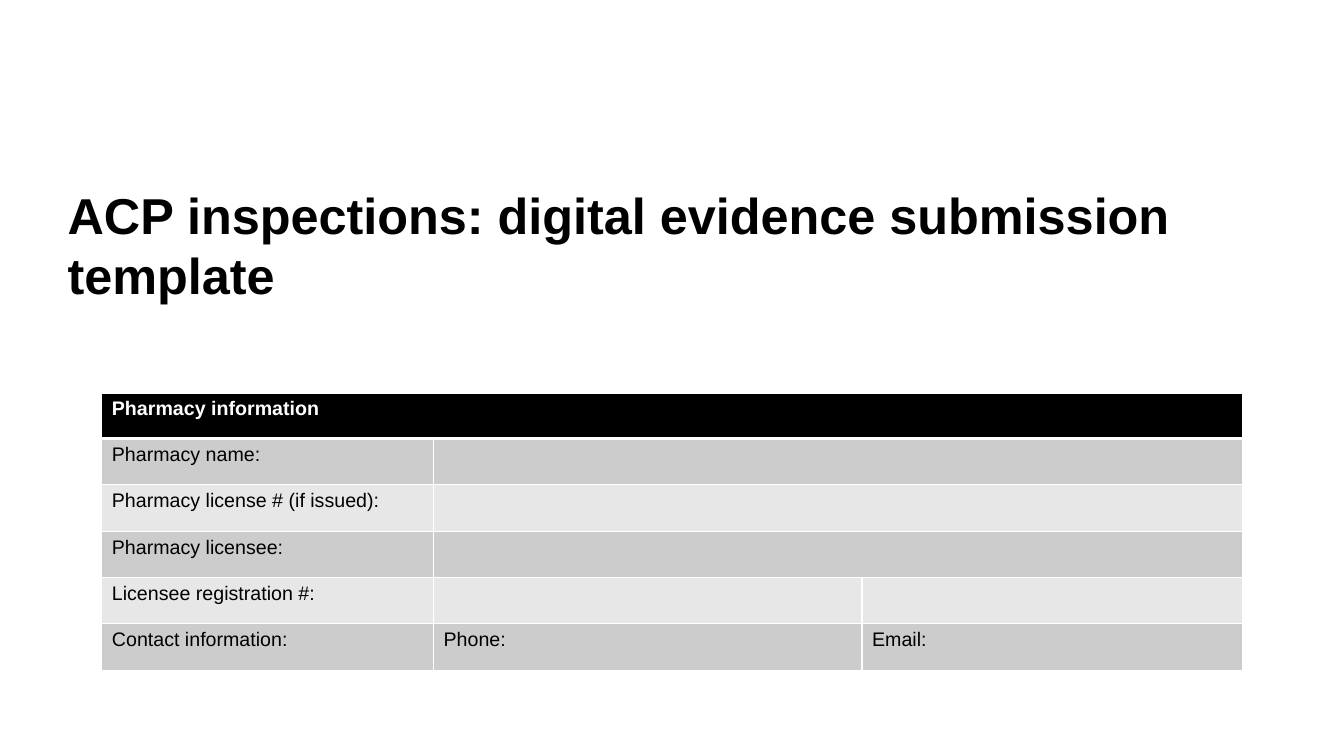
from lxml import etree
from pptx import Presentation
from pptx import util as u
from pptx.dml.color import RGBColor
from pptx.enum import text
from pptx.oxml.ns import qn

WIDTH, HEIGHT = 13.33, 7.5
BLACK, WHITE = "000000", "FFFFFF"
BANDS = ("CCCCCC", "E7E7E7")


def color(hex_code):
    return RGBColor.from_string(hex_code)


def write(frame, words, size=14, bold=False, ink=BLACK, font="Arial"):
    paragraph = frame.paragraphs[0]
    paragraph.text = words
    paragraph.alignment = text.PP_ALIGN.LEFT
    style = paragraph.font
    style.name, style.size, style.bold = font, u.Pt(size), bold
    style.color.rgb = color(ink)


class FormSlide:
    """Holds the slide; places are shares of its width and height."""

    def __init__(self, deck):
        self.deck = deck
        self.slide = deck.slides.add_slide(deck.slide_layouts[5])

    def box(self, left, top, width, height):
        across, down = self.deck.slide_width, self.deck.slide_height
        return [u.Emu(round(share * side)) for share, side in
                zip((left, top, width, height), (across, down, across, down))]

    def title(self, words, place):
        heading = self.slide.shapes.title
        heading.left, heading.top, heading.width, heading.height = self.box(*place)
        frame = heading.text_frame
        frame.word_wrap = True
        frame.auto_size = text.MSO_AUTO_SIZE.NONE
        frame.vertical_anchor = text.MSO_ANCHOR.MIDDLE
        write(frame, words, size=36, bold=True)

    def cell(self, cell, words, fill, bottom=1, **style):
        cell.fill.solid()
        cell.fill.fore_color.rgb = color(fill)
        write(cell.text_frame, words, **style)
        # White rules on all four sides
        properties = cell._tc.get_or_add_tcPr()
        for index, (side, points) in enumerate(zip("LRTB", (1, 1, 1, bottom))):
            rule = etree.Element(qn(f"a:ln{side}"), w=str(u.Pt(points)))
            paint = etree.SubElement(rule, qn("a:solidFill"))
            etree.SubElement(paint, qn("a:srgbClr"), val=WHITE)
            properties.insert(index, rule)

    def form(self, header, entries, place, widths, header_height, row_height):
        table = self.slide.shapes.add_table(
            len(entries) + 1, len(widths), *self.box(*place)).table
        for column, width in zip(table.columns, widths):
            column.width = u.Inches(width)
        for row in table.rows:
            row.height = u.Inches(row_height)
        table.rows[0].height = u.Inches(header_height)

        # Header across the whole form
        for column in range(len(widths)):
            self.cell(table.cell(0, column), "" if column else header, BLACK,
                      bottom=3, bold=True, ink=WHITE)
        table.cell(0, 0).merge(table.cell(0, len(widths) - 1))

        # Banded entries; a short entry stretches its last field to the edge
        for row, entry in enumerate(entries, 1):
            for column in range(len(widths)):
                words = entry[column] if column < len(entry) else ""
                self.cell(table.cell(row, column), words, BANDS[(row - 1) % 2])
            if len(entry) < len(widths):
                table.cell(row, len(entry) - 1).merge(
                    table.cell(row, len(widths) - 1))


def main():
    deck = Presentation()
    deck.slide_width, deck.slide_height = u.Inches(WIDTH), u.Inches(HEIGHT)
    cover = FormSlide(deck)

    # Title
    cover.title("ACP inspections: digital evidence submission template",
                (0.57 / WIDTH, 1.62 / HEIGHT, 0.85, 1.61 / HEIGHT))

    # Pharmacy form
    cover.form(
        "Pharmacy information",
        [("Pharmacy name:", ""),
         ("Pharmacy license # (if issued):", ""),
         ("Pharmacy licensee:", ""),
         ("Licensee registration #:", "", ""),
         ("Contact information:", "Phone:", "Email:")],
        place=(1.01 / WIDTH, 0.52, 11.31 / WIDTH, 2.73 / HEIGHT),
        widths=(3.29, 4.25, 3.77), header_height=0.45, row_height=0.46)

    deck.save("out.pptx")


if __name__ == "__main__":
    main()
